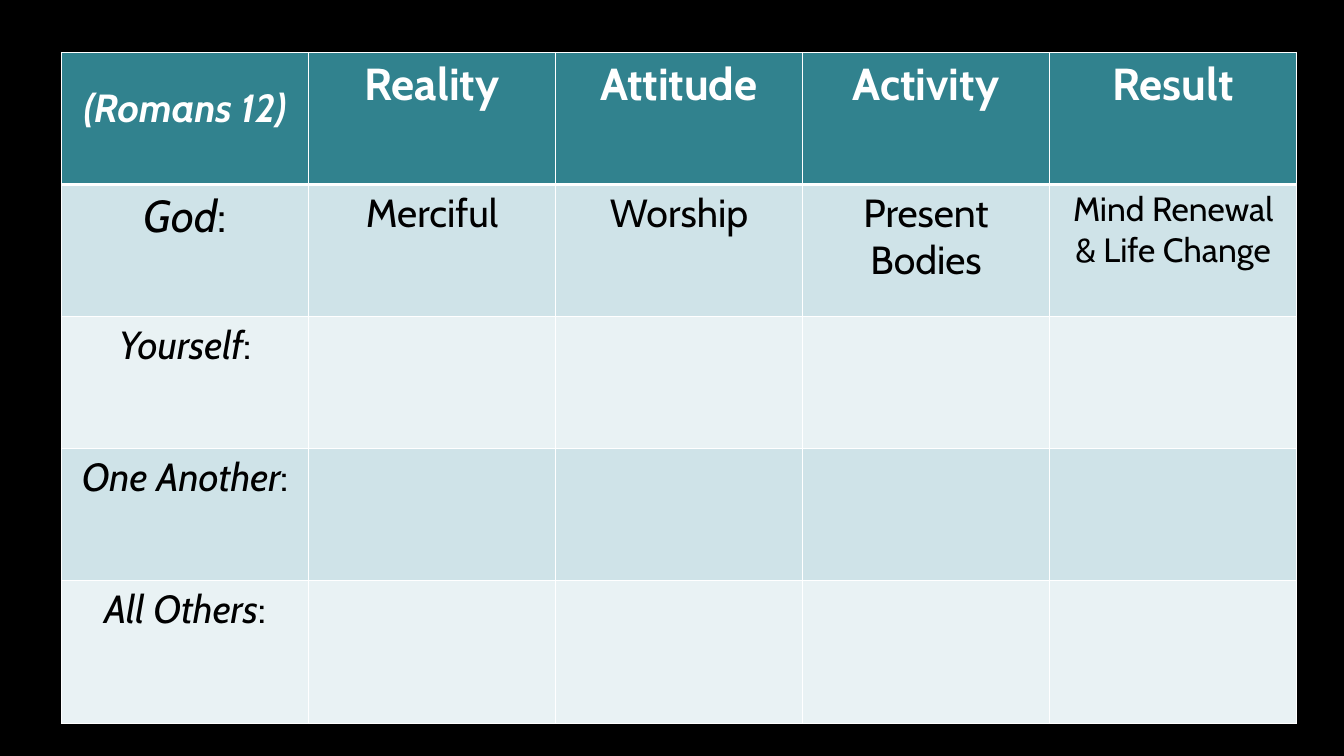
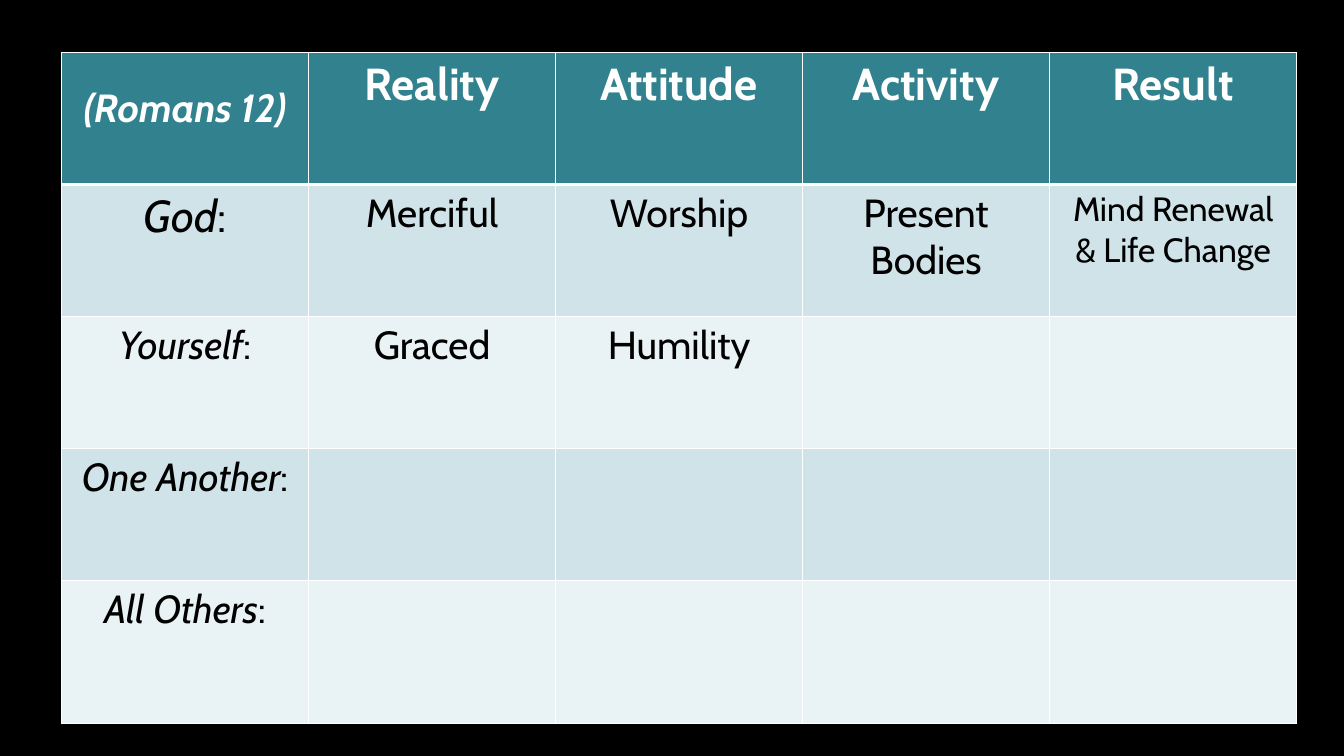
from lxml import etree
from pptx import Presentation
from pptx import util as u
from pptx.dml.color import RGBColor
from pptx.enum import text
from pptx.oxml import ns

BLACK = "000000"
WHITE = "FFFFFF"
HEADER = "31828E"
BANDS = ["CFE3E8", "E9F2F4"]
FONT = "Cabin"

COLUMN_WIDTH = 2.45
ROW_HEIGHTS = [1.31, 1.31, 1.31, 1.31, 1.42]
HEADINGS = ["(Romans 12)", "Reality", "Attitude", "Activity", "Result"]
LABELS = ["God", "Yourself", "One Another", "All Others"]
GOD_ANSWERS = ["Merciful", "Worship", "Present Bodies", "Mind Renewal & Life Change"]
PAGES = [
    {"God": GOD_ANSWERS},
    {"God": GOD_ANSWERS, "Yourself": ["Graced", "Humility"]},
]
SIZES = {"(Romans 12)": 28, "God": 32, "Mind Renewal & Life Change": 24}


def add_span(para, words, size=28, color=BLACK, bold=False, italic=False):
    para.alignment = text.PP_ALIGN.CENTER
    span = para.add_run()
    span.text = words
    span.font.name = FONT
    span.font.size = u.Pt(size)
    span.font.bold = bold
    span.font.italic = italic
    span.font.color.rgb = RGBColor.from_string(color)


def style_cell(cell, color, top=1, bottom=1):
    properties = cell._tc.get_or_add_tcPr()
    for side, width in [("lnL", 1), ("lnR", 1), ("lnT", top), ("lnB", bottom)]:
        line = etree.SubElement(properties, ns.qn("a:" + side), w=str(u.Pt(width)))
        fill = etree.SubElement(line, ns.qn("a:solidFill"))
        etree.SubElement(fill, ns.qn("a:srgbClr"), val=WHITE)
    cell.fill.solid()
    cell.fill.fore_color.rgb = RGBColor.from_string(color)


deck = Presentation()
deck.slide_width = u.Inches(13.33)
deck.slide_height = u.Inches(7.5)
background = deck.slide_master.background.fill
background.solid()
background.fore_color.rgb = RGBColor.from_string(BLACK)
blank_layout = deck.slide_layouts[6]

for answers in PAGES:
    page = deck.slides.add_slide(blank_layout)
    table = page.shapes.add_table(
        len(ROW_HEIGHTS), len(HEADINGS), u.Inches(0.61), u.Inches(0.52),
        u.Inches(COLUMN_WIDTH * len(HEADINGS)), u.Inches(sum(ROW_HEIGHTS)),
    ).table
    table.first_row = False
    table.horz_banding = False
    for column in table.columns:
        column.width = u.Inches(COLUMN_WIDTH)
    for row, height in zip(table.rows, ROW_HEIGHTS):
        row.height = u.Inches(height)

    for index, heading in enumerate(HEADINGS):
        cell = table.cell(0, index)
        style_cell(cell, HEADER, bottom=3)
        add_span(cell.text_frame.paragraphs[0], heading, size=SIZES.get(heading, 32),
                 color=WHITE, bold=True, italic=index == 0)
    table.cell(0, 0).margin_top = u.Inches(0.32)

    for number, label in enumerate(LABELS, start=1):
        for index in range(len(HEADINGS)):
            style_cell(table.cell(number, index), BANDS[(number - 1) % 2],
                       top=3 if number == 1 else 1)
        para = table.cell(number, 0).text_frame.paragraphs[0]
        size = SIZES.get(label, 28)
        add_span(para, label, size=size, italic=True)
        add_span(para, ":", size=size)
        for index, answer in enumerate(answers.get(label, []), start=1):
            add_span(table.cell(number, index).text_frame.paragraphs[0], answer,
                     size=SIZES.get(answer, 28))

deck.save("out.pptx")
